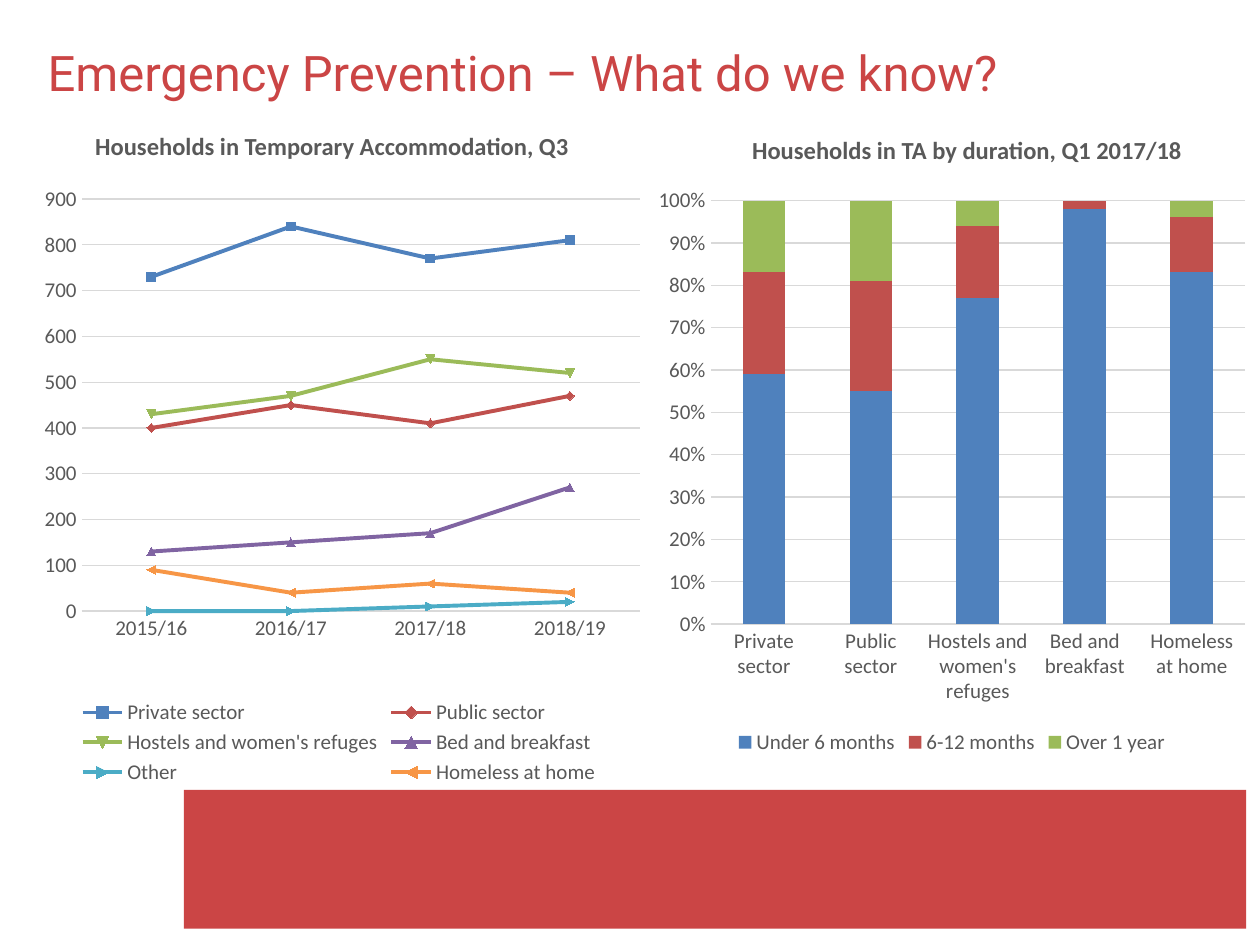
from dataclasses import dataclass

from lxml.etree import SubElement
from pptx import Presentation
from pptx.chart.data import CategoryChartData
from pptx.dml.color import RGBColor
from pptx.enum.chart import XL_CHART_TYPE as Chart, XL_LEGEND_POSITION as Legend, XL_TICK_MARK as Tick
from pptx.enum.shapes import MSO_SHAPE as Shape
from pptx.enum.text import MSO_AUTO_SIZE as Fit, PP_ALIGN as Align
from pptx.oxml.ns import qn
from pptx.util import Inches, Pt


@dataclass(frozen=True)
class Theme:
    """Colours, fonts and type sizes of the slide."""
    accent: RGBColor = RGBColor.from_string("CB4545")
    text: RGBColor = RGBColor.from_string("595959")
    grid: RGBColor = RGBColor.from_string("D9D9D9")
    series: tuple = tuple(map(RGBColor.from_string, (
        "4F81BD", "C0504D", "9BBB59", "8064A2", "4BACC6", "F79646")))
    title_font: str = "Roboto"
    body_font: str = "Calibri"
    title: Pt = Pt(28)
    heading: Pt = Pt(14)
    label: Pt = Pt(12)
    hairline: Pt = Pt(0.75)
    trend: Pt = Pt(2.25)


THEME = Theme()
TITLE = dict(name=THEME.title_font, size=THEME.title)
HEADING = dict(name=THEME.body_font, size=THEME.heading, bold=True)
LABEL = dict(name=THEME.body_font, size=THEME.label, bold=False)

YEARS = ("2015/16", "2016/17", "2017/18", "2018/19")
HOUSEHOLDS = {
    "Private sector": (730, 840, 770, 810),
    "Public sector": (400, 450, 410, 470),
    "Hostels and women's refuges": (430, 470, 550, 520),
    "Bed and breakfast": (130, 150, 170, 270),
    "Other": (0, 0, 10, 20),
    "Homeless at home": (90, 40, 60, 40),
}
TENURES = [name for name in HOUSEHOLDS if name != "Other"]
DURATIONS = {
    "Under 6 months": (59, 55, 77, 98, 83),
    "6-12 months": (24, 26, 17, 2, 13),
    "Over 1 year": (17, 19, 6, 0, 4),
}


def box(*lengths):
    """Turn left, top, width and height in inches into lengths."""
    return tuple(map(Inches, lengths))


def set_all(obj, **values):
    """Set several attributes of an object."""
    for name, value in values.items():
        setattr(obj, name, value)


def style_font(font, color, values):
    """Apply a type style and a colour to a font."""
    set_all(font, **values)
    font.color.rgb = color


def add_text(slide, area, text, color, style, **paragraph):
    """Place one line of text in a box."""
    tf = slide.shapes.add_textbox(*area).text_frame
    set_all(tf, word_wrap=True, auto_size=Fit.SHAPE_TO_FIT_TEXT)
    p = tf.paragraphs[0]
    set_all(p, **paragraph)
    r = p.add_run()
    r.text = text
    style_font(r.font, color, style)


def add_band(slide, area):
    """Place the plain accent band at the foot."""
    sp = slide.shapes.add_shape(Shape.RECTANGLE, *area)
    sp.shadow.inherit = False
    sp.fill.solid()
    sp.fill.fore_color.rgb = THEME.accent
    sp.line.fill.background()


def add_chart(slide, area, kind, categories, series):
    """Place a chart with shared axis, grid and legend styling."""
    data = CategoryChartData()
    data.categories = categories
    for name, values in series.items():
        data.add_series(name, values)
    chart = slide.shapes.add_chart(kind, *area, data).chart
    set_all(chart, has_title=False, has_legend=True)
    set_all(chart.legend, position=Legend.BOTTOM, include_in_layout=False)
    cat, val = chart.category_axis, chart.value_axis
    for axis in (cat, val):
        set_all(axis, major_tick_mark=Tick.NONE, minor_tick_mark=Tick.NONE)
    for font in (chart.font, cat.tick_labels.font, val.tick_labels.font, chart.legend.font):
        style_font(font, THEME.text, LABEL)
    val.has_major_gridlines = True
    for line in (cat.format.line, val.major_gridlines.format.line):
        line.color.rgb = THEME.grid
        line.width = THEME.hairline
    val.format.line.fill.background()
    return chart


def set_plot_area(chart, **fractions):
    """Fix the inner plot area as fractions of the chart."""
    area = chart.plots[0]._element.getparent()
    for old in area.findall(qn("c:layout")):
        area.remove(old)
    layout = SubElement(area, qn("c:layout"))
    area.insert(0, layout)
    manual = SubElement(layout, qn("c:manualLayout"))
    settings = dict(layoutTarget="inner", xMode="edge", yMode="edge", **fractions)
    for name, value in settings.items():
        SubElement(manual, qn(f"c:{name}")).set("val", str(value))


def add_household_trend(slide, area):
    """Place the line chart of households by year."""
    chart = add_chart(slide, area, Chart.LINE, YEARS, HOUSEHOLDS)
    set_all(chart.value_axis, minimum_scale=0, maximum_scale=900, major_unit=100)
    set_plot_area(chart, x=0.098, y=0.035, w=0.872, h=0.673)
    for series, color in zip(chart.plots[0].series, THEME.series):
        series.smooth = False
        series.marker.style = None
        series.format.line.color.rgb = color
        series.format.line.width = THEME.trend


def add_duration_split(slide, area):
    """Place the stacked columns of stay durations."""
    chart = add_chart(slide, area, Chart.COLUMN_STACKED_100, TENURES, DURATIONS)
    set_all(chart.value_axis, minimum_scale=0, maximum_scale=1, major_unit=0.1)
    set_all(chart.value_axis.tick_labels, number_format="0%", number_format_is_linked=False)
    plot = chart.plots[0]
    set_all(plot, gap_width=150, overlap=100, vary_by_categories=False)
    for series, color in zip(plot.series, THEME.series):
        series.format.fill.solid()
        series.format.fill.fore_color.rgb = color


def main():
    """Build and save the slide."""
    prs = Presentation()
    set_all(prs, slide_width=Inches(10), slide_height=Inches(7.5))
    slide = prs.slides.add_slide(prs.slide_layouts[6])
    add_band(slide, box(1.46, 6.27, 8.43, 1.1))
    add_text(slide, box(0.28, 0.29, 9.45, 0.57),
             "Emergency Prevention – What do we know?", THEME.accent, TITLE)
    add_duration_split(slide, box(5.13, 1.4, 4.85, 4.63))
    add_text(slide, box(4.92, 0.92, 5.51, 0.41), "Households in TA by duration, Q1 2017/18",
             THEME.text, HEADING, alignment=Align.CENTER, line_spacing=Pt(24), space_after=Pt(12))
    add_household_trend(slide, box(0.15, 1.41, 5.08, 4.86))
    add_text(slide, box(0.51, 0.99, 4.25, 0.34), "Households in Temporary Accommodation, Q3",
             THEME.text, HEADING, alignment=Align.CENTER)
    prs.save("out.pptx")


if __name__ == "__main__":
    main()
